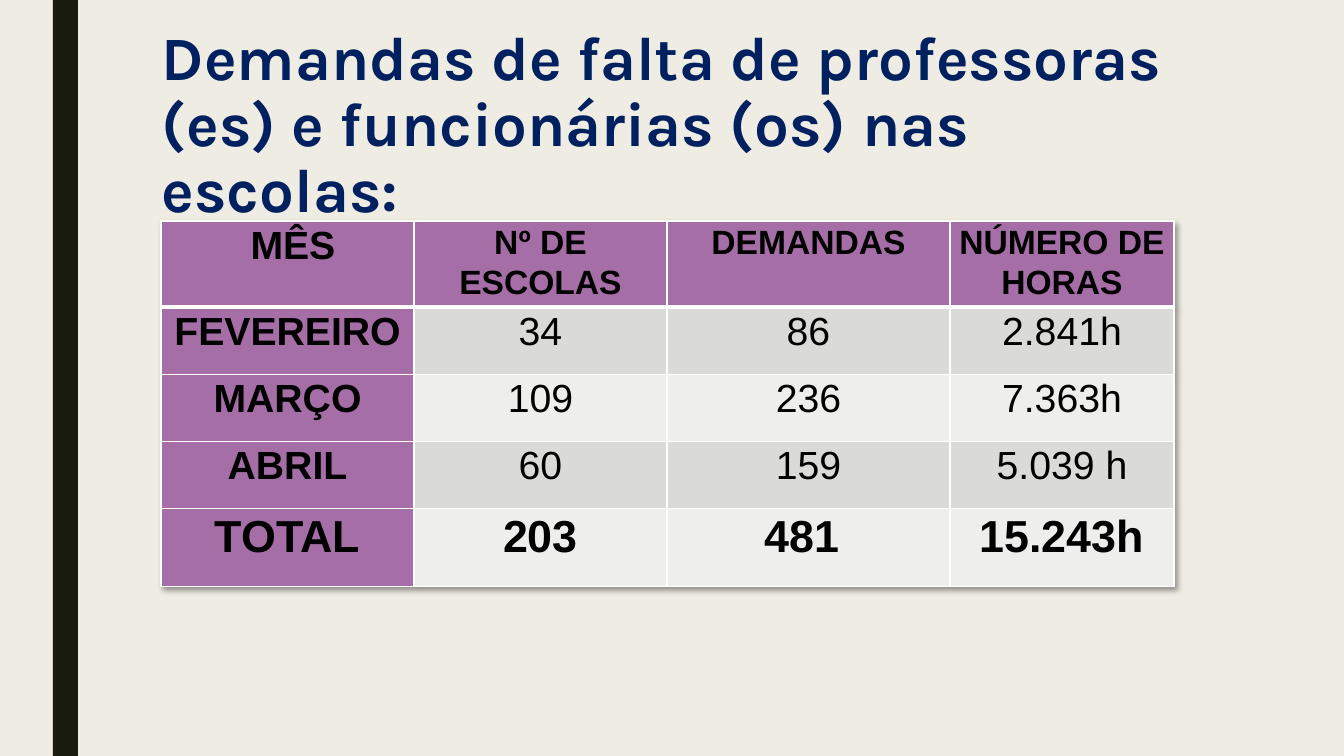
from lxml import etree
from pptx import Presentation
from pptx.dml.color import RGBColor
from pptx.enum.shapes import MSO_SHAPE
from pptx.enum.text import MSO_ANCHOR, PP_ALIGN
from pptx.oxml import parse_xml
from pptx.oxml.ns import nsdecls, qn
from pptx.util import Pt

PX = 914400 / 100.8
COLORS = {
    "background": "EFEDE3", "bar": "191B0E", "title": "002060", "text": "000000",
    "purple": "A66EA7", "odd": "DADBD9", "even": "EEEEED", "border": "FFFFFF",
}
ROWS = [
    [" MÊS", "Nº DE ESCOLAS", "DEMANDAS", "NÚMERO DE HORAS"],
    ["FEVEREIRO", "34", "86", "2.841h"],
    ["MARÇO", "109", "236", "7.363h"],
    ["ABRIL", "60", "159", "5.039 h"],
    ["TOTAL", "203", "481 ", "15.243h"],
]
COLUMN_WIDTHS = [253, 253, 283, 224]
ROW_HEIGHTS = [67, 67, 67, 67, 78]
SIDES = ["lnL", "lnR", "lnT", "lnB"]


def box(*lengths):
    """Turn pixel lengths into EMU."""
    return [round(length * PX) for length in lengths]


def style_run(run, font_name, size, color, bold):
    run.font.name = font_name
    run.font.size = Pt(size)
    run.font.bold = bold
    run.font.color.rgb = RGBColor.from_string(COLORS[color])


presentation = Presentation()
presentation.slide_width, presentation.slide_height = box(1344, 756)
slide = presentation.slides.add_slide(presentation.slide_layouts[6])
slide.background.fill.solid()
slide.background.fill.fore_color.rgb = RGBColor.from_string(COLORS["background"])

bar = slide.shapes.add_shape(MSO_SHAPE.RECTANGLE, *box(53, 0, 25, 756))
bar.shadow.inherit = False
bar.fill.solid()
bar.fill.fore_color.rgb = RGBColor.from_string(COLORS["bar"])
bar.line.fill.background()

title = slide.shapes.add_textbox(*box(152, 23, 1058, 163))
title.text_frame.word_wrap = True
title.text_frame.vertical_anchor = MSO_ANCHOR.TOP
paragraph = title.text_frame.paragraphs[0]
paragraph.text = "Demandas de falta de professoras (es) e funcionárias (os) nas escolas:"
paragraph.line_spacing = 0.89
style_run(paragraph.runs[0], "Karla", 44, "title", True)

frame = slide.shapes.add_table(
    len(ROWS), len(COLUMN_WIDTHS), *box(161, 221, sum(COLUMN_WIDTHS), sum(ROW_HEIGHTS)))
table = frame.table
for column, width in zip(table.columns, COLUMN_WIDTHS):
    column.width = box(width)[0]
for row, height in zip(table.rows, ROW_HEIGHTS):
    row.height = box(height)[0]

shadow = parse_xml(
    f'<a:effectLst {nsdecls("a")}><a:outerShdw blurRad="50800" dist="38100" dir="2700000" '
    'algn="tl" rotWithShape="0"><a:srgbClr val="000000"><a:alpha val="40000"/></a:srgbClr>'
    '</a:outerShdw></a:effectLst>')
table._tbl.tblPr.insert(0, shadow)

for row_index, values in enumerate(ROWS):
    is_header = row_index == 0
    is_total = row_index == len(ROWS) - 1
    for column_index, value in enumerate(values):
        is_label = is_header or column_index == 0
        cell = table.cell(row_index, column_index)
        cell.margin_left = cell.margin_right = box(7)[0]
        cell.margin_top = cell.margin_bottom = 0
        paragraph = cell.text_frame.paragraphs[0]
        paragraph.text = value
        paragraph.alignment = PP_ALIGN.CENTER
        paragraph.line_spacing = 1.07
        size = 32 if is_total else 24 if is_header and column_index else 28
        style_run(paragraph.runs[0], "Arial", size, "text", is_label or is_total)

        properties = cell._tc.get_or_add_tcPr()
        for side in SIDES:
            heavy = (is_header and side == "lnB") or (row_index == 1 and side == "lnT")
            line = etree.SubElement(properties, qn(f"a:{side}"), w=str(Pt(3 if heavy else 1)))
            fill = etree.SubElement(line, qn("a:solidFill"))
            etree.SubElement(fill, qn("a:srgbClr"), val=COLORS["border"])
        cell.fill.solid()
        shade = "purple" if is_label else "odd" if row_index % 2 else "even"
        cell.fill.fore_color.rgb = RGBColor.from_string(COLORS[shade])

presentation.save("out.pptx")
